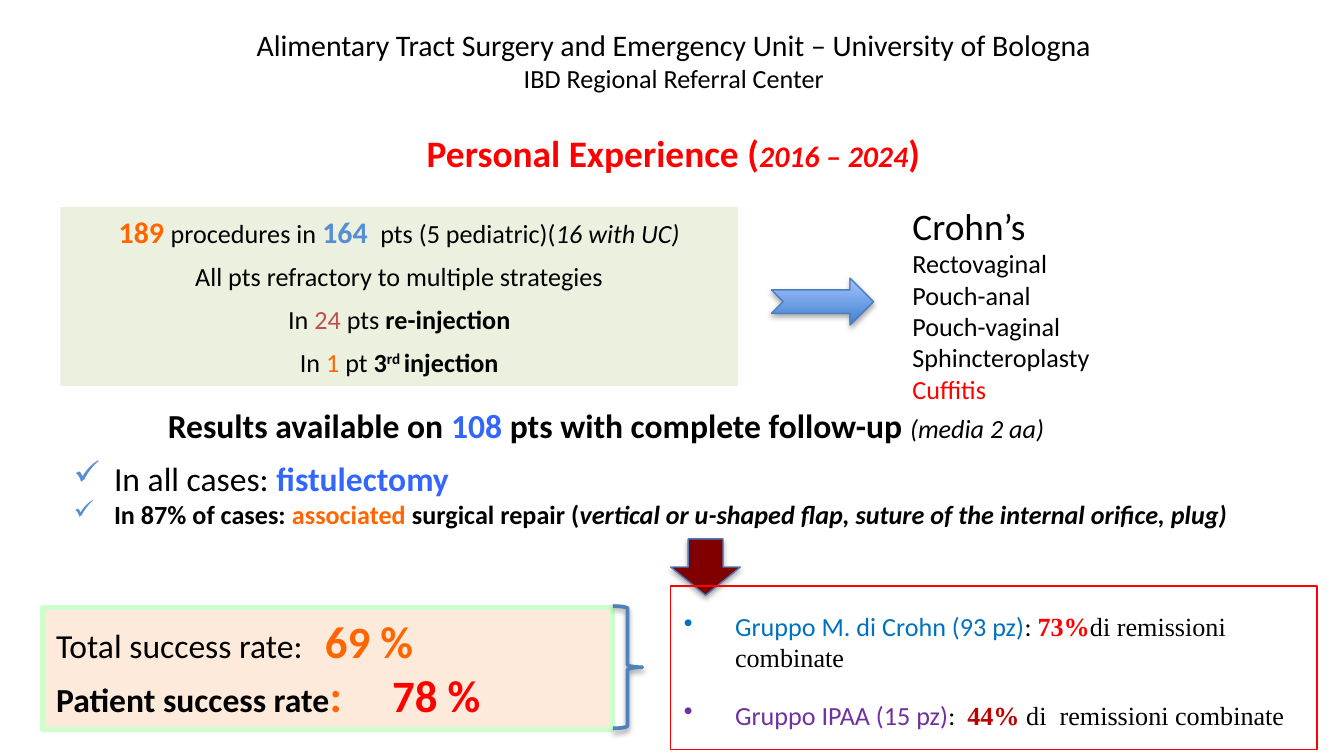
from pptx import Presentation
from pptx.dml.color import RGBColor
from pptx.enum.shapes import MSO_SHAPE
from pptx.enum.text import MSO_ANCHOR, PP_ALIGN
from pptx.oxml import parse_xml
from pptx.oxml.ns import nsdecls
from pptx.util import Pt

COLORS = {
    "black": "000000", "red": "FF0000", "orange": "FF6600", "sky": "558ED5",
    "blue": "3366FF", "brick": "C0504D", "azure": "0070C0", "purple": "7030A0",
    "crimson": "C00000", "maroon": "800000", "sage": "EBF1DE", "peach": "FDEADA",
    "mint": "CCFFCC", "outline": "4B7EBC", "brace": "4F81BD",
    "deep": "3F80CE", "pale": "A4C4FF",
}
SERIF = "Times New Roman"


class SlideBuilder:
    """Holds the text style and the slide, and adds each kind of element."""

    def __init__(self, s, font="Calibri"):
        self.s = s
        self.font = font

    def color(self, name):
        return RGBColor.from_string(COLORS[name])

    def run(self, p, text, size=14, color="black", name=None, base=None, **fmt):
        r = p.add_run()
        r.text = text
        values = {"size": Pt(size), "name": name or self.font, **fmt}
        for key, value in values.items():
            setattr(r.font, key, value)
        r.font.color.rgb = self.color(color)
        if base:
            r.font._element.set("baseline", str(base * 1000))

    def bullet(self, p, char, indent, color=None):
        pPr = p._p.get_or_add_pPr()
        pPr.set("marL", str(Pt(indent)))
        pPr.set("indent", str(-Pt(indent)))
        if color:
            pPr.append(parse_xml(f'<a:buClr {nsdecls("a")}><a:srgbClr val="{COLORS[color]}"/></a:buClr>'))
        pPr.append(parse_xml(f'<a:buChar {nsdecls("a")} char="{char}"/>'))

    def tab(self, p, pos):
        p._p.get_or_add_pPr().append(parse_xml(
            f'<a:tabLst {nsdecls("a")}><a:tab pos="{Pt(pos)}" algn="l"/></a:tabLst>'))

    def fill_text(self, sp, paragraphs, align=PP_ALIGN.LEFT, anchor=MSO_ANCHOR.TOP,
                  insets=(7.2, 3.6), after=0, between=0, bullet=None, tabs=()):
        tf = sp.text_frame
        x, y = map(Pt, insets)
        frame = {"word_wrap": True, "vertical_anchor": anchor, "margin_left": x,
                 "margin_right": x, "margin_top": y, "margin_bottom": y}
        for key, value in frame.items():
            setattr(tf, key, value)
        for i, runs in enumerate(paragraphs):
            p = tf.add_paragraph() if i else tf.paragraphs[0]
            if bullet:
                self.bullet(p, *bullet)
            if tabs:
                self.tab(p, tabs[i])
            spacing = {"alignment": align, "space_after": Pt(after),
                       "space_before": Pt(between if i else 0)}
            for key, value in spacing.items():
                setattr(p, key, value)
            for text, fmt in runs:
                self.run(p, text, **fmt)

    def text(self, box, paragraphs, **style):
        self.fill_text(self.s.shapes.add_textbox(*map(Pt, box)), paragraphs, **style)

    def shape(self, kind, box, fill=None, line=None, width=0.75, shadow=None):
        sp = self.s.shapes.add_shape(kind, *map(Pt, box))
        sp.shadow.inherit = False
        if isinstance(fill, tuple):
            sp.fill.gradient()
            sp.fill.gradient_angle = 90
            for position, (stop, name) in enumerate(zip(sp.fill.gradient_stops, fill)):
                stop.color.rgb = self.color(name)
                stop.position = position
        elif fill:
            sp.fill.solid()
            sp.fill.fore_color.rgb = self.color(fill)
        else:
            sp.fill.background()
        if line:
            sp.line.color.rgb = self.color(line)
            sp.line.width = Pt(width)
        else:
            sp.line.fill.background()
        if shadow:
            self.drop_shadow(sp, shadow)
        return sp

    def drop_shadow(self, sp, alpha):
        effects = sp._element.spPr.find("{*}effectLst")
        effects.append(parse_xml(
            f'<a:outerShdw {nsdecls("a")} blurRad="{Pt(3.1)}" dist="{Pt(1.7)}" dir="5400000" rotWithShape="0">'
            f'<a:srgbClr val="{COLORS["black"]}"><a:alpha val="{alpha * 1000}"/></a:srgbClr></a:outerShdw>'))

    def panel(self, box, paragraphs, fill=None, line=None, width=0.75, **style):
        self.fill_text(self.shape(MSO_SHAPE.RECTANGLE, box, fill, line, width), paragraphs, **style)


def main():
    prs = Presentation()
    prs.slide_width, prs.slide_height = Pt(720), Pt(405)
    b = SlideBuilder(prs.slides.add_slide(prs.slide_layouts[6]))
    title = {"size": 20, "color": "red", "bold": True}
    big = {"size": 18, "bold": True}
    rate = {"size": 24, "bold": True}
    strong = {"bold": True}

    b.text((95, 64, 531.4, 36), [[
        ("Personal Experience (", title),
        ("2016 – 2024", {**title, "size": 16, "italic": True}),
        (")", title),
    ]], align=PP_ALIGN.CENTER, anchor=MSO_ANCHOR.MIDDLE, insets=(0, 0))
    b.text((16.6, 10.8, 689, 44), [
        [("Alimentary Tract Surgery and Emergency Unit – University of Bologna", {"size": 16})],
        [("IBD Regional Referral Center", {})],
    ], align=PP_ALIGN.CENTER)
    b.panel((32.4, 111, 363, 95.8), [
        [("189 ", {"size": 16, "color": "orange", "bold": True}), ("procedures in ", {}),
         ("164 ", {"size": 16, "color": "sky", "bold": True}),
         (" pts (5 pediatric)(", {}), ("16 with UC)", {"italic": True})],
        [("All pts refractory to multiple strategies", {})],
        [("In ", {}), ("24 ", {"color": "brick"}), ("pts ", {}), ("re-injection", strong)],
        [("In ", {}), ("1", {"color": "orange"}), (" pt ", {}), ("3", strong),
         ("rd ", {"bold": True, "base": 30}), ("injection", strong)],
    ], fill="sage", align=PP_ALIGN.CENTER, after=6)
    b.text((82.8, 213.1, 553, 29), [[
        ("Results available on ", big), ("108 ", {**big, "color": "blue"}),
        ("pts with complete follow-up ", big), ("(media 2 aa)", {"italic": True}),
    ]])
    b.panel((23, 325.4, 305.3, 65.5), [
        [("Total success rate: \t", {"size": 18}), ("69 %", {**rate, "color": "orange"})],
        [("Patient success rate", big), (": \t", {**rate, "color": "orange"}),
         ("78 %", {**rate, "color": "red"})],
    ], fill="peach", line="mint", width=3, tabs=(144, 180))
    b.shape(MSO_SHAPE.NOTCHED_RIGHT_ARROW, (413.3, 149, 54.7, 25.2),
            ("deep", "pale"), "outline", shadow=35)
    fistulas = ["Rectovaginal", "Pouch-anal", "Pouch-vaginal", "Sphincteroplasty"]
    b.text((481.7, 105.1, 144.7, 116.6), [
        [("Crohn’s", {"size": 20})],
        *[[(name, {})] for name in fistulas],
        [("Cuffitis", {"color": "red"})],
    ])
    b.shape(MSO_SHAPE.DOWN_ARROW, (359.3, 288.7, 37.4, 30.2), "maroon", "outline", shadow=35)
    b.text((32.4, 241.9, 641.5, 46), [
        [("In all cases: ", {"size": 18}), ("fistulectomy", {**big, "color": "blue"})],
        [("In 87% of cases: ", strong), ("associated ", {"bold": True, "color": "orange"}),
         ("surgical repair (", strong),
         ("vertical or u-shaped flap, suture of the internal orifice, plug)",
          {"bold": True, "italic": True})],
    ], bullet=("✓", 21.6, "sky"))
    b.shape(MSO_SHAPE.RIGHT_BRACE, (328.3, 324.7, 15.8, 65.5), line="brace", width=2, shadow=38)
    b.panel((359.3, 313.9, 346.3, 87.8), [
        [("Gruppo M. di Crohn (93 pz)", {"color": "azure"}), (": ", {}),
         ("73%", {"color": "red", "bold": True, "name": SERIF}),
         ("di remissioni combinate", {"name": SERIF})],
        [("Gruppo IPAA (15 pz)", {"color": "purple"}), (":  ", {}),
         ("44%", {"color": "crimson", "bold": True, "name": SERIF}),
         (" di  remissioni combinate", {"name": SERIF})],
    ], line="red", insets=(7.2, 13), between=14, bullet=("•", 27.4))
    prs.save("out.pptx")


if __name__ == "__main__":
    main()
